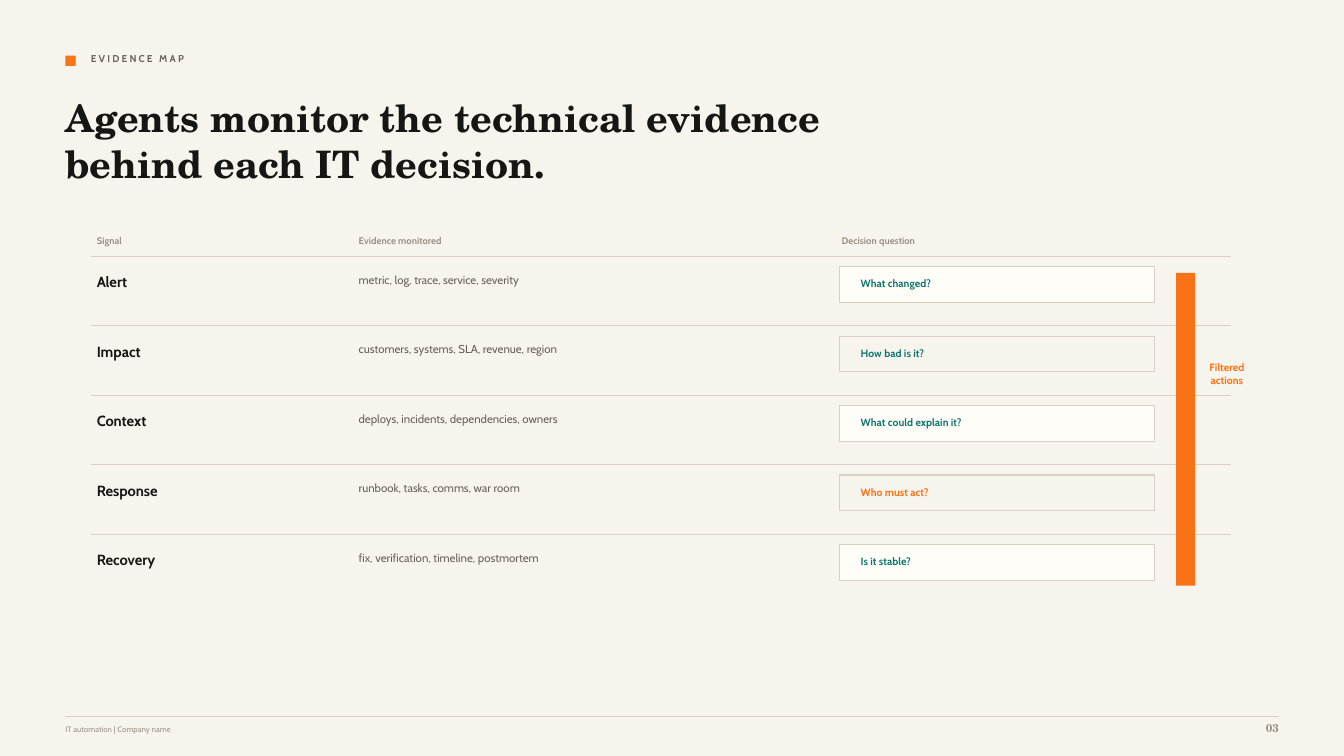
from dataclasses import dataclass

import pptx
import pptx.dml.color
import pptx.enum.shapes
import pptx.enum.text
import pptx.oxml
import pptx.oxml.ns
import pptx.shapes.autoshape
import pptx.slide
import pptx.text.text
import pptx.util

Cm = pptx.util.Cm
Pt = pptx.util.Pt
ALIGN = pptx.enum.text.PP_ALIGN

COLORS = {
    "paper": "F7F4EE",
    "card": "FFFDF8",
    "rule": "D9D0C3",
    "ink": "171614",
    "body": "69635A",
    "muted": "9A9184",
    "orange": "F97316",
    "teal": "0F766E",
}
SANS = "Cabin"
SERIF = "TeX Gyre Schola"

MARGIN = 1.65
TABLE_LEFT, TABLE_TOP, TABLE_WIDTH = 2.29, 6.46, 28.73
ROW_PITCH = 1.75
SIGNAL_LEFT, EVIDENCE_LEFT, QUESTION_LEFT = 2.44, 9.04, 21.16


@dataclass(frozen=True)
class Header:
    text: str
    left: float
    width: float


@dataclass(frozen=True)
class Signal:
    name: str
    evidence: str
    question: str
    color: str = "teal"


HEADERS = [
    Header("Signal", SIGNAL_LEFT, 4.24),
    Header("Evidence monitored", EVIDENCE_LEFT, 8.2),
    Header("Decision question", 21.21, 7.42),
]
SIGNALS = [
    Signal("Alert", "metric, log, trace, service, severity", "What changed?"),
    Signal("Impact", "customers, systems, SLA, revenue, region", "How bad is it?"),
    Signal("Context", "deploys, incidents, dependencies, owners", "What could explain it?"),
    Signal("Response", "runbook, tasks, comms, war room", "Who must act?", "orange"),
    Signal("Recovery", "fix, verification, timeline, postmortem", "Is it stable?"),
]


def rgb(name: str) -> pptx.dml.color.RGBColor:
    return pptx.dml.color.RGBColor.from_string(COLORS[name])


def write_text(frame: pptx.text.text.TextFrame, text: str, *, size: float, color: str,
               font: str = SANS, bold: bool = True, align: ALIGN = ALIGN.LEFT,
               tracking: float = 0) -> None:
    """Fill a frame without insets; tracking is extra letter spacing in points."""
    frame.word_wrap = True
    frame.auto_size = pptx.enum.text.MSO_AUTO_SIZE.NONE
    frame.vertical_anchor = pptx.enum.text.MSO_ANCHOR.TOP
    frame.margin_left = frame.margin_right = frame.margin_top = frame.margin_bottom = 0
    paragraph = frame.paragraphs[0]
    paragraph.alignment = align
    run = paragraph.add_run()
    run.text = text
    run.font.name = font
    run.font.size = Pt(size)
    run.font.bold = bold
    run.font.color.rgb = rgb(color)
    if tracking:
        run.font._element.set("spc", str(round(tracking * 100)))


def add_text(slide: pptx.slide.Slide, text: str, left: float, top: float,
             width: float, height: float, **text_format) -> None:
    box = slide.shapes.add_textbox(Cm(left), Cm(top), Cm(width), Cm(height))
    write_text(box.text_frame, text, **text_format)


def add_rectangle(slide: pptx.slide.Slide, left: float, top: float, width: float,
                  height: float, fill: str | None = None, line: str | None = None
                  ) -> pptx.shapes.autoshape.Shape:
    shape = slide.shapes.add_shape(pptx.enum.shapes.MSO_SHAPE.RECTANGLE,
                                   Cm(left), Cm(top), Cm(width), Cm(height))
    shape.shadow.inherit = False
    if fill:
        shape.fill.solid()
        shape.fill.fore_color.rgb = rgb(fill)
    else:
        shape.fill.background()
    if line:
        shape.line.color.rgb = rgb(line)
        shape.line.width = Pt(0.75)
    else:
        shape.line.fill.background()
    return shape


def add_rule(slide: pptx.slide.Slide, left: float, top: float, width: float) -> None:
    rule = slide.shapes.add_connector(pptx.enum.shapes.MSO_CONNECTOR.STRAIGHT,
                                      Cm(left), Cm(top), Cm(left + width), Cm(top))
    rule.line.color.rgb = rgb("rule")
    rule.line.width = Pt(0.75)
    properties = rule._element.spPr
    properties.append(pptx.oxml.parse_xml(
        f"<a:effectLst {pptx.oxml.ns.nsdecls('a')}/>"))


def add_heading(slide: pptx.slide.Slide) -> None:
    title = slide.shapes.title
    title.left, title.top = Cm(MARGIN), Cm(2.39)
    title.width, title.height = Cm(22.48), Cm(2.64)
    write_text(title.text_frame,
               "Agents monitor the technical evidence behind each IT decision.",
               size=27, color="ink", font=SERIF)
    add_rectangle(slide, MARGIN, 1.4, 0.26, 0.26, fill="orange")
    add_text(slide, "EVIDENCE MAP", TABLE_LEFT, 1.32, 16.4, 0.48,
             size=7.1, color="body", tracking=1.6)


def add_signal_row(slide: pptx.slide.Slide, index: int, signal: Signal) -> None:
    top = TABLE_TOP + index * ROW_PITCH
    add_rule(slide, TABLE_LEFT, top, TABLE_WIDTH)
    add_text(slide, signal.name, SIGNAL_LEFT, top + 0.42, 4.78, 0.48, size=10.5, color="ink")
    add_text(slide, signal.evidence, EVIDENCE_LEFT, top + 0.42, 9.53, 0.89,
             size=8.2, color="body", bold=False)
    add_rectangle(slide, QUESTION_LEFT, top + 0.26, 7.94, 0.9,
                  fill="card" if index % 2 == 0 else None, line="rule")
    add_text(slide, signal.question, QUESTION_LEFT + 0.53, top + 0.53, 6.88, 0.41,
             size=7.5, color=signal.color)


def add_footer(slide: pptx.slide.Slide) -> None:
    add_rule(slide, MARGIN, 18.05, 30.58)
    add_text(slide, "IT automation | Company name", MARGIN, 18.26, 20.12, 0.38,
             size=5.6, color="muted", bold=False)
    add_text(slide, "03", 30.96, 18.16, 1.27, 0.48,
             size=8.2, color="muted", font=SERIF, align=ALIGN.RIGHT)


def main() -> None:
    presentation = pptx.Presentation()
    presentation.slide_width = Cm(33.87)
    presentation.slide_height = Cm(19.05)
    title_only = presentation.slide_layouts[5]
    slide = presentation.slides.add_slide(title_only)
    slide.background.fill.solid()
    slide.background.fill.fore_color.rgb = rgb("paper")

    add_heading(slide)
    for header in HEADERS:
        add_text(slide, header.text, header.left, 5.92, header.width, 0.43,
                 size=6.8, color="muted")
    for index, signal in enumerate(SIGNALS):
        add_signal_row(slide, index, signal)
    add_rectangle(slide, 29.64, 6.88, 0.48, 7.88, fill="orange")
    add_text(slide, "Filtered actions", 30.32, 9.1, 1.2, 3.12,
             size=7.5, color="orange", align=ALIGN.CENTER)
    add_footer(slide)
    presentation.save("out.pptx")


if __name__ == "__main__":
    main()
